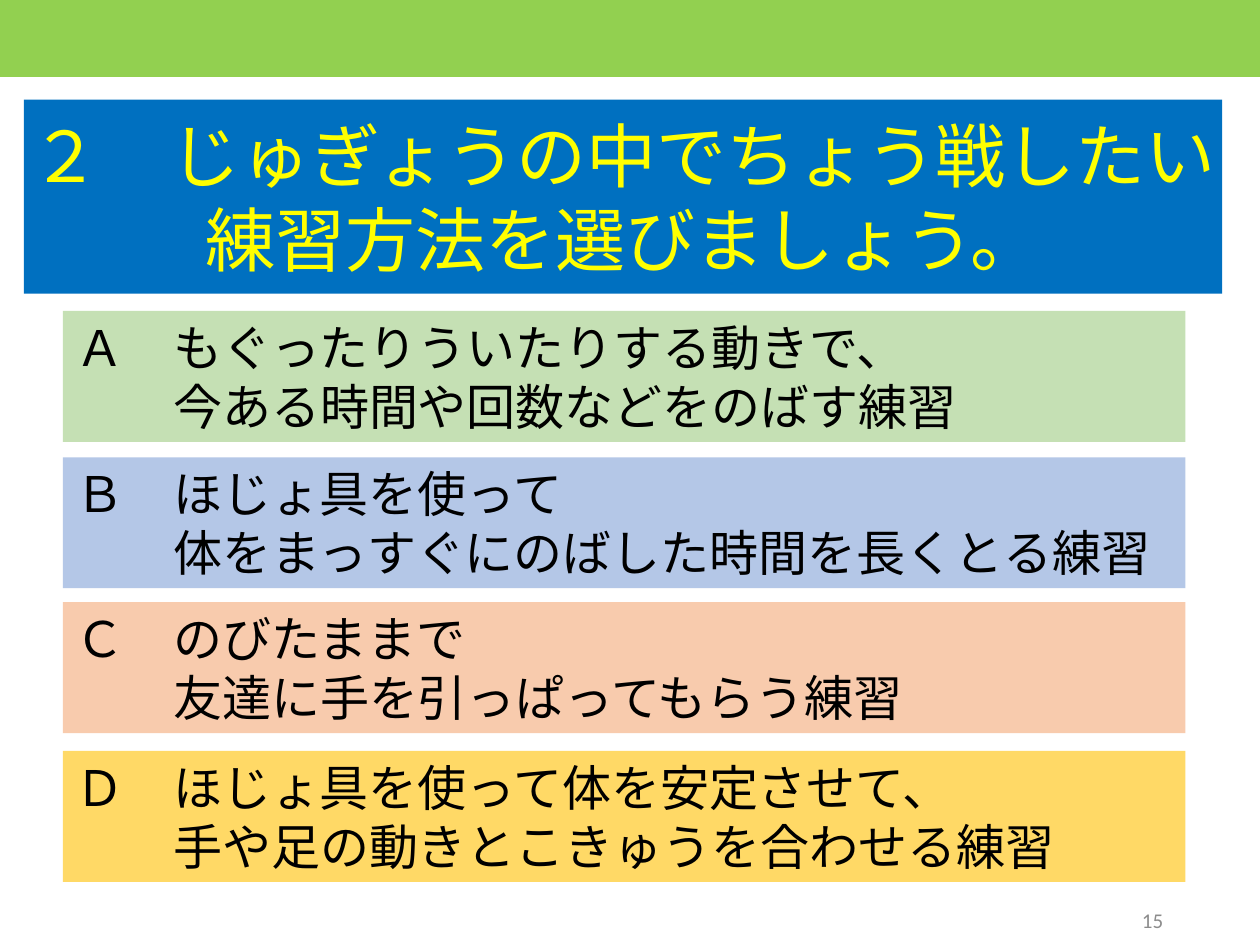
from dataclasses import dataclass

from pptx import Presentation
from pptx.dml.color import RGBColor
from pptx.enum.lang import MSO_LANGUAGE_ID
from pptx.enum.shapes import MSO_SHAPE
from pptx.enum.text import MSO_ANCHOR, PP_ALIGN
from pptx.shapes.autoshape import Shape
from pptx.slide import Slide
from pptx.text.text import _Paragraph
from pptx.util import Cm, Pt

GREEN = RGBColor(0x92, 0xD0, 0x50)
BLUE = RGBColor(0x00, 0x70, 0xC0)
YELLOW = RGBColor(0xFF, 0xFF, 0x00)
BLACK = RGBColor(0x00, 0x00, 0x00)
GREY = RGBColor(0x8C, 0x8C, 0x8C)
PALE_GREEN = RGBColor(0xC5, 0xE0, 0xB4)
PALE_BLUE = RGBColor(0xB4, 0xC7, 0xE7)
PALE_ORANGE = RGBColor(0xF8, 0xCB, 0xAD)
GOLD = RGBColor(0xFF, 0xD9, 0x66)

BODY_FONT = "Calibri"
TITLE_FONT = "Noto Sans CJK JP"
PRACTICE_SIZE = 28


@dataclass(frozen=True)
class Practice:
    top: float
    fill: RGBColor
    heading: str
    detail: str


PRACTICES = (
    Practice(6.27, PALE_GREEN, "Ａ　もぐったりういたりする動きで、",
             "今ある時間や回数などをのばす練習"),
    Practice(9.22, PALE_BLUE, "Ｂ　ほじょ具を使って",
             "体をまっすぐにのばした時間を長くとる練習"),
    Practice(12.14, PALE_ORANGE, "Ｃ　のびたままで",
             "友達に手を引っぱってもらう練習"),
    Practice(15.14, GOLD, "Ｄ　ほじょ具を使って体を安定させて、",
             "手や足の動きとこきゅうを合わせる練習"),
)
TITLE_LINES = ("２　じゅぎょうの中でちょう戦したい", "練習方法を選びましょう。")


def add_panel(slide: Slide, left: float, top: float, width: float,
              height: float, fill: RGBColor) -> Shape:
    """Add a borderless rectangle measured in centimetres."""
    panel = slide.shapes.add_shape(
        MSO_SHAPE.RECTANGLE, Cm(left), Cm(top), Cm(width), Cm(height))
    panel.shadow.inherit = False
    panel.fill.solid()
    panel.fill.fore_color.rgb = fill
    panel.line.fill.background()
    panel.text_frame.word_wrap = True
    panel.text_frame.vertical_anchor = MSO_ANCHOR.TOP
    return panel


def write_lines(shape: Shape, lines: tuple[str, ...], size: int, font: str,
                color: RGBColor, align: PP_ALIGN) -> list[_Paragraph]:
    frame = shape.text_frame
    for index, line in enumerate(lines):
        paragraph = frame.add_paragraph() if index else frame.paragraphs[0]
        paragraph.text = line
        paragraph.alignment = align
        paragraph.font.size = Pt(size)
        paragraph.font.name = font
        paragraph.font.color.rgb = color
        paragraph.font.language_id = MSO_LANGUAGE_ID.JAPANESE
    return list(frame.paragraphs)


def add_practice(slide: Slide, practice: Practice) -> None:
    panel = add_panel(slide, 1.27, practice.top, 22.63, 2.64, practice.fill)
    _, detail = write_lines(panel, (practice.heading, practice.detail),
                            PRACTICE_SIZE, BODY_FONT, BLACK, PP_ALIGN.LEFT)
    # Two full-width characters bring the detail under the heading's text.
    detail._p.get_or_add_pPr().set("marL", str(Pt(2 * PRACTICE_SIZE)))


def add_title(slide: Slide) -> None:
    panel = add_panel(slide, 0.48, 2.01, 24.16, 3.91, BLUE)
    frame = panel.text_frame
    frame.margin_left = frame.margin_right = Cm(0.05)
    frame.margin_top = Cm(0.25)
    for paragraph in write_lines(panel, TITLE_LINES, 40, TITLE_FONT, YELLOW,
                                 PP_ALIGN.CENTER):
        paragraph.line_spacing = Pt(48)


def add_page_number(slide: Slide) -> None:
    number = slide.shapes.add_textbox(Cm(17.98), Cm(18.03), Cm(5.72), Cm(1.02))
    number.text_frame.word_wrap = True
    number.text_frame.vertical_anchor = MSO_ANCHOR.MIDDLE
    write_lines(number, ("15",), 12, BODY_FONT, GREY, PP_ALIGN.RIGHT)


def main() -> None:
    deck = Presentation()
    deck.slide_width, deck.slide_height = Cm(25.4), Cm(19.05)
    slide = deck.slides.add_slide(deck.slide_layouts[6])
    add_panel(slide, -0.05, 0, 25.45, 1.55, GREEN)
    add_page_number(slide)
    for practice in PRACTICES:
        add_practice(slide, practice)
    add_title(slide)
    deck.save("out.pptx")


if __name__ == "__main__":
    main()
